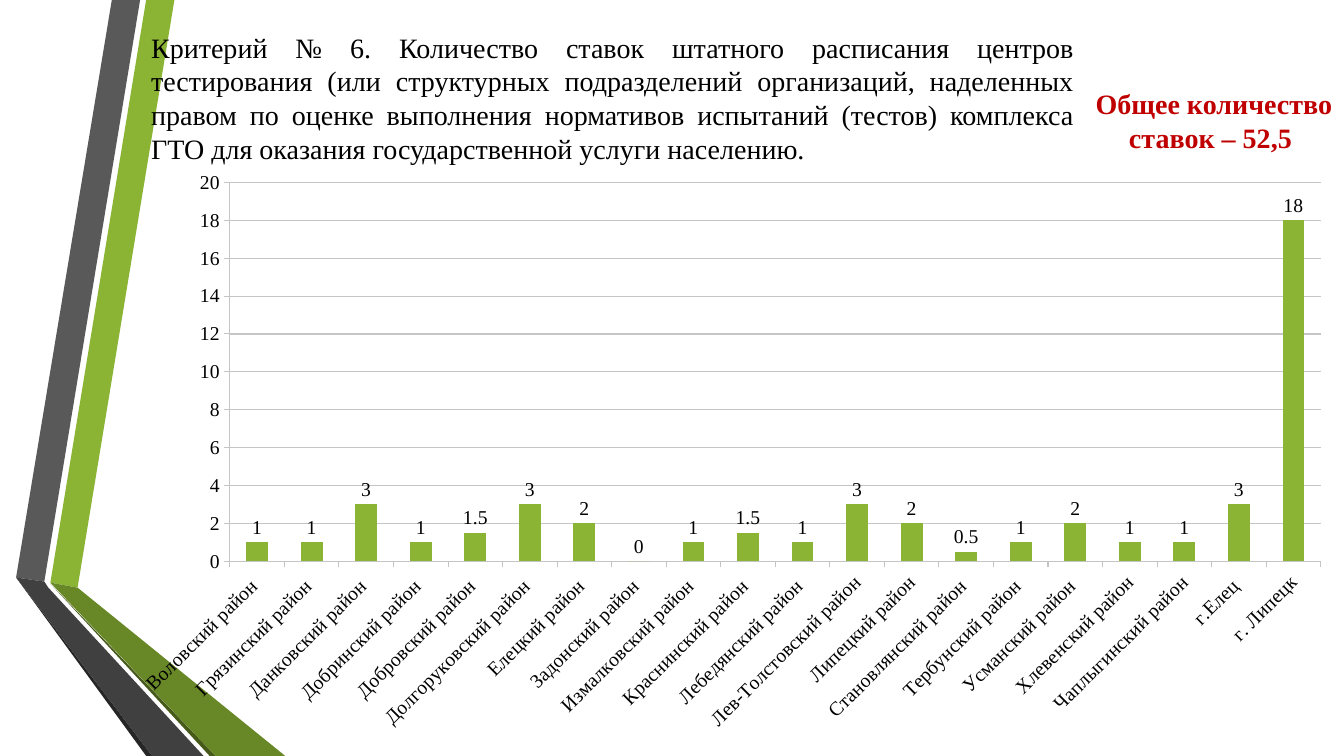
from dataclasses import dataclass

from lxml import etree
from pptx import Presentation
from pptx.chart.data import CategoryChartData as ChartData
from pptx.dml.color import RGBColor as Rgb
from pptx.enum.chart import XL_CHART_TYPE as Kind
from pptx.enum.chart import XL_LABEL_POSITION as Spot
from pptx.enum.chart import XL_TICK_MARK as Tick
from pptx.enum.text import MSO_AUTO_SIZE as Fit
from pptx.enum.text import PP_ALIGN as Align
from pptx.oxml import parse_xml
from pptx.oxml.ns import nsdecls, qn
from pptx.util import Inches, Pt


@dataclass(frozen=True)
class Theme:
    face: str = "Times New Roman"
    ink: str = "000000"
    red: str = "C00000"
    green: str = "8BB434"
    moss: str = "688727"
    olive: str = "465A1A"
    gray: str = "595959"
    dark: str = "404040"
    coal: str = "262626"
    rule: str = "C5C5C5"
    head: int = 20
    label: int = 14
    line: float = 0.75


T = Theme()

TITLE = (
    "Критерий № 6. Количество ставок штатного расписания центров тестирования "
    "(или структурных подразделений организаций, наделенных правом по оценке "
    "выполнения нормативов испытаний (тестов) комплекса ГТО для оказания "
    "государственной услуги населению."
)
TOTAL = "Общее количество ставок – 52,5 "

STAFF = {
    "Воловский район ": 1,
    "Грязинский район ": 1,
    "Данковский район ": 3,
    "Добринский район ": 1,
    "Добровский район ": 1.5,
    "Долгоруковский район ": 3,
    "Елецкий район ": 2,
    "Задонский район ": 0,
    "Измалковский район ": 1,
    "Краснинский район ": 1.5,
    "Лебедянский район ": 1,
    "Лев-Толстовский район": 3,
    "Липецкий район": 2,
    "Становлянский район ": 0.5,
    "Тербунский район ": 1,
    "Усманский район ": 2,
    "Хлевенский район": 1,
    "Чаплыгинский район": 1,
    "г.Елец ": 3,
    "г. Липецк": 18,
}

BANDS = [
    (T.green, [(0.34, 5.78), (0.61, 5.83), (1.57, 0), (1.29, 0)]),
    (T.gray, [(1.23, 0), (0.95, 0), (0, 5.73), (0.28, 5.77)]),
    (T.coal, [(0, 5.73), (1.29, 7.5), (1.35, 7.5)]),
    (T.olive, [(0.34, 5.79), (1.92, 7.5), (1.98, 7.5)]),
    (T.moss, [(0.34, 5.78), (1.98, 7.5), (2.67, 7.5), (0.61, 5.83)]),
    (T.dark, [(1.86, 7.5), (0.32, 5.83), (0.28, 5.77), (0, 5.73), (1.35, 7.5)]),
]


def style(font, size, color, bold=False):
    font.name = T.face
    font.size = Pt(size)
    font.bold = bold
    font.color.rgb = Rgb.from_string(color)


def add_text(slide, text, box, size=T.head, color=T.ink, bold=False, align=Align.LEFT):
    frame = slide.shapes.add_textbox(*map(Inches, box)).text_frame
    frame.word_wrap = True
    frame.auto_size = Fit.SHAPE_TO_FIT_TEXT
    para = frame.paragraphs[0]
    para.alignment = align
    run = para.add_run()
    run.text = text
    style(run.font, size, color, bold)


def add_bands(slide, left, top):
    for color, spots in BANDS:
        (x, y), *rest = [(Inches(left + x), Inches(top + y)) for x, y in spots]
        pen = slide.shapes.build_freeform(x, y)
        pen.add_line_segments(rest, close=True)
        band = pen.convert_to_shape()
        band.shadow.inherit = False
        band.fill.solid()
        band.fill.fore_color.rgb = Rgb.from_string(color)
        band.line.fill.background()


def set_line(form):
    form.line.width = Pt(T.line)
    form.line.color.rgb = Rgb.from_string(T.rule)


def set_axis(axis):
    axis.major_tick_mark = Tick.OUTSIDE
    axis.minor_tick_mark = Tick.NONE
    style(axis.tick_labels.font, T.label, T.ink)
    set_line(axis.format)


def set_plot(root, box, inset):
    wide, high = box[2:]
    x, y, w, h = inset
    area = root.find(".//" + qn("c:plotArea"))
    for old in area.findall(qn("c:layout")):
        area.remove(old)
    layout = parse_xml(f"<c:layout {nsdecls('c')}/>")
    manual = etree.SubElement(layout, qn("c:manualLayout"))
    marks = dict(
        layoutTarget="inner", xMode="edge", yMode="edge",
        x=x / wide, y=y / high, w=w / wide, h=h / high,
    )
    for name, val in marks.items():
        etree.SubElement(manual, qn("c:" + name)).set("val", str(val))
    area.insert(0, layout)


def add_bars(slide, box):
    data = ChartData()
    data.categories = list(STAFF)
    data.add_series("Series 1", list(STAFF.values()))
    chart = slide.shapes.add_chart(
        Kind.COLUMN_CLUSTERED, *map(Inches, box), data
    ).chart
    chart.has_legend = False
    chart.has_title = False
    style(chart.font, T.label, T.ink)

    plot = chart.plots[0]
    plot.gap_width = 150
    plot.vary_by_categories = False
    fill = plot.series[0].format.fill
    fill.solid()
    fill.fore_color.rgb = Rgb.from_string(T.green)

    plot.has_data_labels = True
    labels = plot.data_labels
    labels.show_value = True
    labels.position = Spot.OUTSIDE_END
    style(labels.font, T.label, T.ink)

    set_axis(chart.category_axis)
    value = chart.value_axis
    set_axis(value)
    value.minimum_scale = 0
    value.maximum_scale = 20
    value.major_unit = 2
    value.has_major_gridlines = True
    set_line(value.major_gridlines.format)

    root = chart._chartSpace
    body = root.find(".//" + qn("c:catAx")).find(".//" + qn("a:bodyPr"))
    body.set("rot", str(-45 * 60000))
    body.set("vert", "horz")
    set_plot(root, box, (1.13, 0.23, 10.82, 3.76))


def main():
    deck = Presentation()
    deck.slide_width = Inches(13.33)
    deck.slide_height = Inches(7.5)
    slide = deck.slides.add_slide(deck.slide_layouts[6])
    add_bands(slide, 0.16, 0)
    add_bars(slide, (1.15, 1.58, 12.18, 5.78))
    add_text(slide, TITLE, (1.4, 0.25, 9.35, 1.45), align=Align.JUSTIFY)
    add_text(
        slide, TOTAL, (10.6, 0.81, 2.88, 0.77),
        color=T.red, bold=True, align=Align.CENTER,
    )
    deck.save("out.pptx")


if __name__ == "__main__":
    main()
